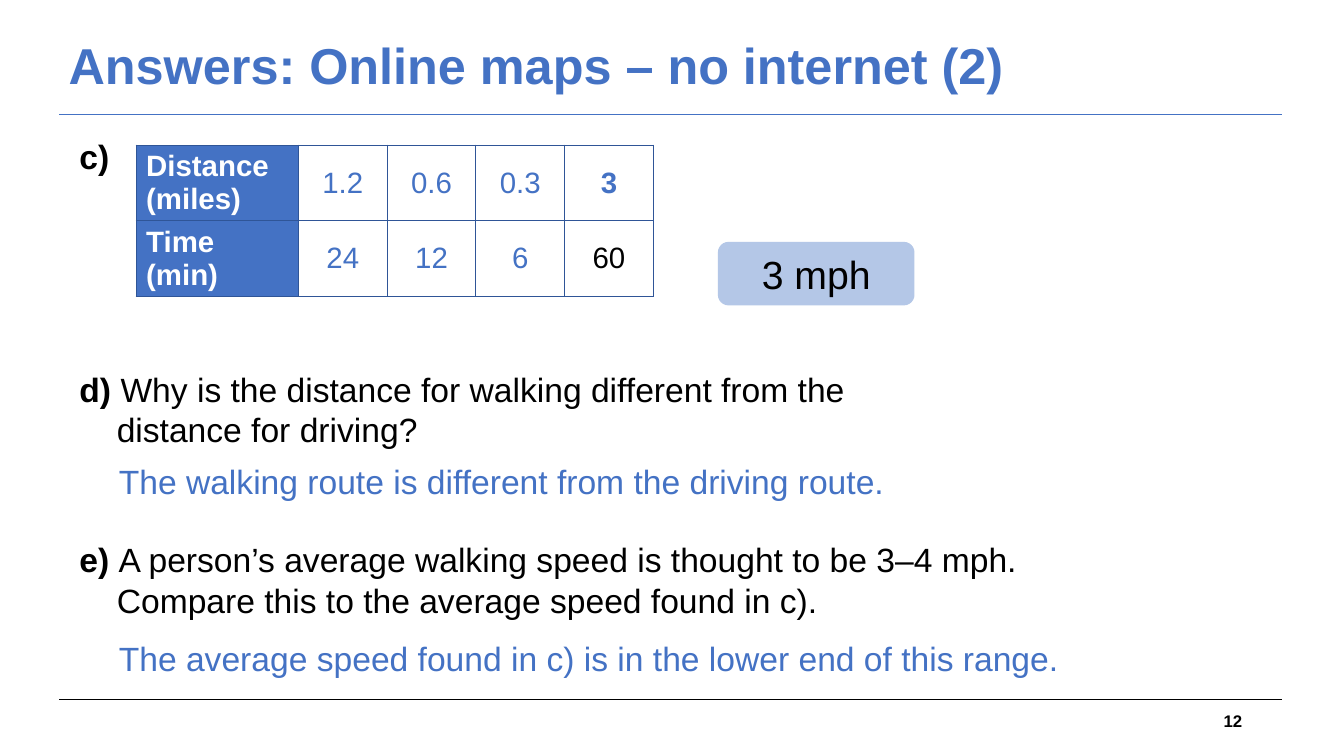
from lxml import etree
from pptx import Presentation
from pptx import util as u
from pptx.dml.color import RGBColor
from pptx.enum import shapes, text
from pptx.oxml.ns import qn

PX = 9144  # 100 px to the inch
BLUE, DARK_BLUE, PALE_BLUE = "4472C4", "2F5597", "B4C7E7"
BLACK, WHITE = "000000", "FFFFFF"


def box(*lengths):
    return [u.Emu(n * PX) for n in lengths]


def write(p, words, size=24, color=BLACK, bold=False, align=None, indent=0):
    r = p.add_run()
    r.text = words
    r.font.name, r.font.size, r.font.bold = "Arial", u.Pt(size), bold
    r.font.color.rgb = RGBColor.from_string(color)
    if align:
        p.alignment = align
    if indent:
        p._p.get_or_add_pPr().set("marL", str(indent * PX))


prs = Presentation()
prs.slide_width, prs.slide_height = box(1333, 750)
s = prs.slides.add_slide(prs.slide_layouts[5])
CENTER, RIGHT = text.PP_ALIGN.CENTER, text.PP_ALIGN.RIGHT
MIDDLE = text.MSO_ANCHOR.MIDDLE

# Rules under the title and above the footer
for y, color in [(694, BLACK), (114, BLUE)]:
    line = s.shapes.add_connector(shapes.MSO_CONNECTOR.STRAIGHT, *box(59, y, 1272, y))
    line.line.color.rgb = RGBColor.from_string(color)
    line.line.width = u.Pt(0.75)
    etree.SubElement(line._element.spPr, qn("a:effectLst"))

# Title
title = s.shapes.title
title.left, title.top, title.width, title.height = box(58, 12, 1001, 111)
tf = title.text_frame
tf.auto_size = text.MSO_AUTO_SIZE.NONE
tf.vertical_anchor = MIDDLE
p = tf.paragraphs[0]
p.line_spacing = 0.9
write(p, "Answers: Online maps – no internet (2)", size=36, color=BLUE, bold=True,
      align=text.PP_ALIGN.LEFT)

# Distance and time table
rows = [["Distance (miles)", "1.2", "0.6", "0.3", "3"],
        ["Time (min)", "24", "12", "6", "60"]]
table = s.shapes.add_table(2, 5, *box(135, 144, 513, 150)).table
for i, column in enumerate(table.columns):
    column.width = u.Emu((88 if i else 161) * PX)
for i, row in enumerate(rows):
    for j, value in enumerate(row):
        cell = table.cell(i, j)
        p = cell.text_frame.paragraphs[0]
        if j == 0:
            write(p, value, size=21, color=WHITE, bold=True)
        else:
            cell.vertical_anchor = MIDDLE
            write(p, value, size=21, color=BLACK if value == "60" else BLUE,
                  bold=value == "3", align=CENTER)
        tcPr = cell._tc.get_or_add_tcPr()
        for side in ("lnL", "lnR", "lnT", "lnB"):
            border = etree.SubElement(tcPr, qn("a:" + side), w="12700")
            fill = etree.SubElement(border, qn("a:solidFill"))
            etree.SubElement(fill, qn("a:srgbClr"), val=DARK_BLUE)
        if j == 0:
            cell.fill.solid()
            cell.fill.fore_color.rgb = RGBColor.from_string(BLUE)
        else:
            cell.fill.background()

# Speed label
sp = s.shapes.add_shape(shapes.MSO_SHAPE.ROUNDED_RECTANGLE, *box(712, 240, 195, 63))
sp.shadow.inherit = False
sp.fill.solid()
sp.fill.fore_color.rgb = RGBColor.from_string(PALE_BLUE)
sp.line.fill.background()
sp.text_frame.vertical_anchor = MIDDLE
write(sp.text_frame.paragraphs[0], "3 mph", size=28, align=CENTER)

# Questions: box, letter, first line, second line
questions = [
    ((69, 130, 137, 50), "c)", "", ""),
    ((69, 361, 944, 91), "d) ", "Why is the distance for walking different from the",
     "distance for driving?"),
    ((69, 530, 1047, 91), "e) ", "A person’s average walking speed is thought to be 3–4 mph.",
     "Compare this to the average speed found in c)."),
]
for place, letter, first, second in questions:
    tf = s.shapes.add_textbox(*box(*place)).text_frame
    tf.word_wrap = True
    write(tf.paragraphs[0], letter, bold=True)
    if first:
        write(tf.paragraphs[0], first)
        write(tf.add_paragraph(), second, indent=37)

# Answers
answers = [
    ((108, 452, 815, 50), "The walking route is different from the driving route."),
    ((108, 628, 1018, 50), "The average speed found in c) is in the lower end of this range."),
]
for place, words in answers:
    tf = s.shapes.add_textbox(*box(*place)).text_frame
    tf.word_wrap = True
    write(tf.paragraphs[0], words, color=BLUE)

# Slide number
tf = s.shapes.add_textbox(*box(942, 695, 300, 40)).text_frame
tf.word_wrap = True
tf.vertical_anchor = MIDDLE
write(tf.paragraphs[0], "12", size=12, bold=True, align=RIGHT)

prs.save("out.pptx")
